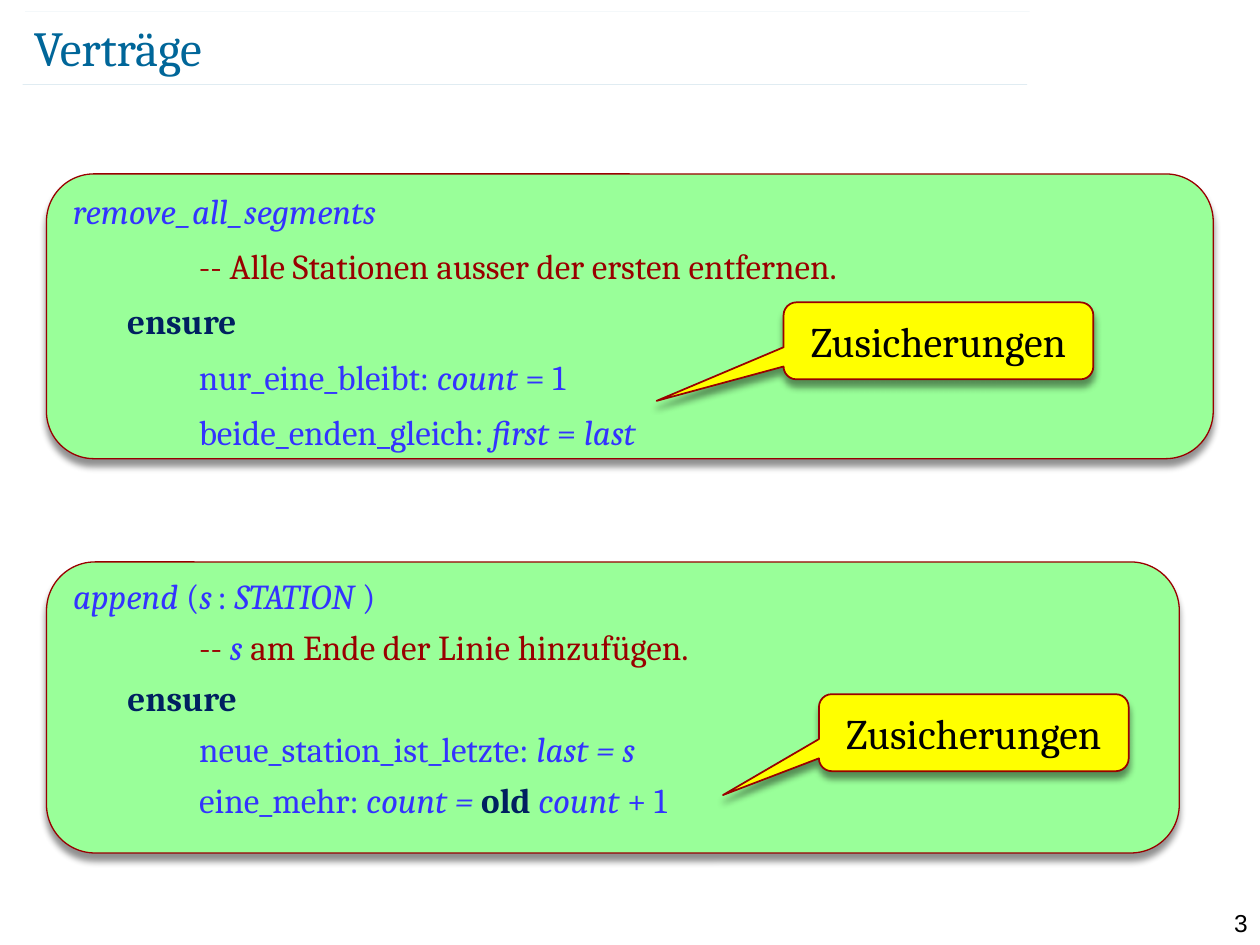
import pptx
import pptx.dml.color
import pptx.enum.shapes
import pptx.enum.text
import pptx.oxml
import pptx.oxml.ns
import pptx.util
from dataclasses import dataclass

Pt = pptx.util.Pt
SHAPE = pptx.enum.shapes.MSO_SHAPE
ALIGN = pptx.enum.text.PP_ALIGN
ANCHOR = pptx.enum.text.MSO_ANCHOR
NS = pptx.oxml.ns.nsdecls("a")


@dataclass(frozen=True)
class Theme:
    heading: str = "006699"
    panel: str = "99FF99"
    border: str = "990000"
    code: str = "3333FF"
    comment: str = "990000"
    keyword: str = "002060"
    callout: str = "FFFF00"
    black: str = "000000"
    font: str = "Cambria"
    number_font: str = "Arial"
    title_size: float = 28
    callout_size: float = 24
    code_size: float = 20
    small_size: float = 14


THEME = Theme()


def rgb(value):
    return pptx.dml.color.RGBColor.from_string(value)


def add_run(paragraph, text, *, size=THEME.code_size, color=THEME.code,
            font=THEME.font, bold=False, italic=False):
    run = paragraph.add_run()
    run.text = text
    run.font.name = font
    run.font.size = Pt(size)
    run.font.bold = bold
    run.font.italic = italic
    run.font.color.rgb = rgb(color)


class SlideBuilder:
    def __init__(self, slide, theme):
        self.slide = slide
        self.theme = theme

    def text(self, box, text, *, align=ALIGN.LEFT, anchor=ANCHOR.TOP,
             margins=(7.2, 3.6), **style):
        label = self.slide.shapes.add_textbox(*map(Pt, box))
        self.fill_frame(label.text_frame, text, align, anchor, margins, style)

    def fill_frame(self, frame, text, align, anchor, margins, style):
        frame.word_wrap = True
        frame.vertical_anchor = anchor
        frame.margin_left = frame.margin_right = Pt(margins[0])
        frame.margin_top = frame.margin_bottom = Pt(margins[1])
        frame.paragraphs[0].alignment = align
        add_run(frame.paragraphs[0], text, **style)

    def rule(self, left, top, width):
        line = self.slide.shapes.add_connector(
            pptx.enum.shapes.MSO_CONNECTOR.STRAIGHT,
            Pt(left), Pt(top), Pt(left + width), Pt(top))
        line.line.width = Pt(0.1)
        line.line.color.rgb = rgb(self.theme.heading)
        color = line.line.fill.fore_color
        properties = line._element.spPr
        for node in properties.iter(pptx.oxml.ns.qn("a:srgbClr")):
            node.append(pptx.oxml.parse_xml(f'<a:alpha {NS} val="35000"/>'))
        properties.append(pptx.oxml.parse_xml(f"<a:effectLst {NS}/>"))

    def box(self, kind, box, fill, line_width):
        shape = self.slide.shapes.add_shape(kind, *map(Pt, box))
        shape.fill.solid()
        shape.fill.fore_color.rgb = rgb(fill)
        shape.line.color.rgb = rgb(self.theme.border)
        shape.line.width = Pt(line_width)
        shape.shadow.inherit = False
        effects = shape._element.spPr.find(pptx.oxml.ns.qn("a:effectLst"))
        effects.append(pptx.oxml.parse_xml(
            f'<a:outerShdw {NS} blurRad="{Pt(4)}" dist="{Pt(4)}" dir="5400000" '
            f'rotWithShape="0"><a:srgbClr val="{self.theme.black}">'
            '<a:alpha val="43000"/></a:srgbClr></a:outerShdw>'))
        return shape

    def contract(self, box, lines, line_spacing):
        """Each line is a left indent and its runs of (text, format)."""
        panel = self.box(SHAPE.ROUNDED_RECTANGLE, box, self.theme.panel, 0.75)
        frame = panel.text_frame
        frame.word_wrap = True
        frame.vertical_anchor = ANCHOR.TOP
        for index, (indent, runs) in enumerate(lines):
            paragraph = frame.add_paragraph() if index else frame.paragraphs[0]
            paragraph.alignment = ALIGN.LEFT
            paragraph.line_spacing = line_spacing
            paragraph.space_before = Pt(10 if index else 0)
            paragraph._p.get_or_add_pPr().set("marL", str(Pt(indent)))
            for text, style in runs:
                add_run(paragraph, text, **style)

    def callout(self, left, top, text, tip):
        bubble = self.box(SHAPE.ROUNDED_RECTANGULAR_CALLOUT,
                          (left, top, 177, 44), self.theme.callout, 1)
        bubble.adjustments[0], bubble.adjustments[1] = tip
        self.fill_frame(bubble.text_frame, text, ALIGN.CENTER, ANCHOR.MIDDLE,
                        (0, 3.6), dict(size=self.theme.callout_size,
                                       color=self.theme.black))


# Text formats and indents of the contract code
PLAIN = {}
ITALIC = dict(italic=True)
SMALL = dict(size=THEME.small_size)
COMMENT = dict(color=THEME.comment)
KEYWORD = dict(color=THEME.keyword, bold=True)
CLAUSE, BODY = 31, 72

REMOVE_ALL = [
    (0, [("remove_all_segments", ITALIC)]),
    (BODY, [("-- Alle Stationen ausser der ersten entfernen.", COMMENT)]),
    (CLAUSE, [("ensure", KEYWORD)]),
    (BODY, [("nur_eine_bleibt: ", PLAIN), ("count ", ITALIC), ("= 1", PLAIN)]),
    (BODY, [("beide_enden_gleich: ", PLAIN), ("first", ITALIC),
            (" = ", PLAIN), ("last", ITALIC)]),
]
APPEND = [
    (0, [("append ", ITALIC), ("(", PLAIN), ("s", ITALIC), (" ", SMALL),
         (":", PLAIN), (" STATION ", ITALIC), (")", PLAIN)]),
    (BODY, [("-- ", COMMENT), ("s", ITALIC),
            (" am Ende der Linie hinzufügen.", COMMENT)]),
    (CLAUSE, [("ensure", KEYWORD)]),
    (BODY, [("neue_station_ist_letzte:", PLAIN), (" last = s", ITALIC)]),
    (BODY, [("eine_mehr: ", PLAIN), ("count = ", ITALIC), ("old ", KEYWORD),
            ("count ", ITALIC), ("+ 1", PLAIN)]),
]


def main():
    deck = pptx.Presentation()
    deck.slide_width, deck.slide_height = Pt(720), Pt(540)
    page = SlideBuilder(deck.slides.add_slide(deck.slide_layouts[6]), THEME)

    # Slide number and title between two thin rules
    page.text((680.4, 515.5, 39.6, 17.3), "3", align=ALIGN.RIGHT,
              size=THEME.small_size, color=THEME.black, font=THEME.number_font)
    page.rule(13, 48.2, 574)
    page.rule(14.4, 6.5, 574)
    page.text((19.4, 9.4, 625.7, 34.6), "Verträge", anchor=ANCHOR.MIDDLE,
              margins=(0, 0), size=THEME.title_size, color=THEME.heading)

    # Contracts
    page.contract((26.6, 99.4, 666.7, 162.7), REMOVE_ALL, 0.9)
    page.contract((26.6, 321.1, 647.3, 166.3), APPEND, 0.8)

    # Callouts pointing at the assertions
    page.callout(447.8, 172.8, "Zusicherungen", (-0.91, 0.78))
    page.callout(468, 396.7, "Zusicherungen", (-0.81, 0.81))

    deck.save("out.pptx")


if __name__ == "__main__":
    main()
